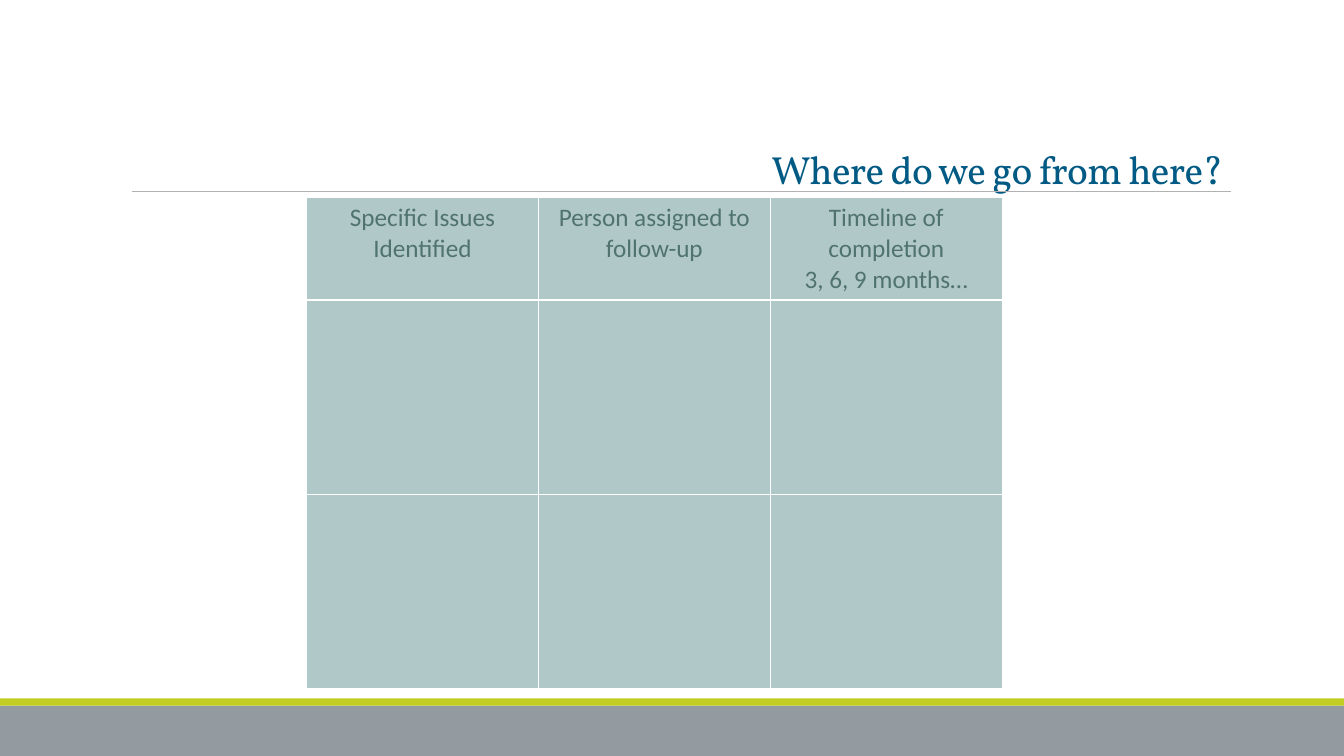
from pptx import Presentation
from pptx.dml.color import RGBColor
from pptx.enum.shapes import MSO_CONNECTOR, MSO_SHAPE
from pptx.enum.text import MSO_ANCHOR, MSO_AUTO_SIZE, PP_ALIGN
from pptx.oxml import parse_xml
from pptx.oxml.ns import nsdecls
from pptx.util import Inches, Pt

COLORS = {
    "footer": "939BA1",
    "accent": "C2CD23",
    "rule": "B2B2B2",
    "title": "005A84",
    "cell": "B0C8C7",
    "cell_text": "507372",
    "border": "FFFFFF",
}
HEADINGS = [
    "Specific Issues Identified",
    "Person assigned to follow-up",
    "Timeline of completion\n3, 6, 9 months…",
]
COLUMN_WIDTH = 2.3
ROW_HEIGHTS = [1.0, 1.93, 1.93]


def rgb(name):
    return RGBColor.from_string(COLORS[name])


def add_band(slide, left, top, width, height, color):
    band = slide.shapes.add_shape(
        MSO_SHAPE.RECTANGLE, Inches(left), Inches(top), Inches(width), Inches(height))
    band.shadow.inherit = False
    band.fill.solid()
    band.fill.fore_color.rgb = rgb(color)
    band.line.fill.background()


def add_footer(slide, left, top, width, height):
    stripe_height = 0.07
    add_band(slide, left, top + stripe_height, width, height - stripe_height, "footer")
    add_band(slide, left, top, width, stripe_height, "accent")


def add_rule(slide, left, top, width):
    rule = slide.shapes.add_connector(
        MSO_CONNECTOR.STRAIGHT, Inches(left), Inches(top), Inches(left + width), Inches(top))
    rule.line.color.rgb = rgb("rule")
    rule.line.width = Pt(0.75)
    rule._element.spPr.append(parse_xml(f"<a:effectLst {nsdecls('a')}/>"))


def place_title(slide, left, top, width, height):
    title = slide.shapes.title
    title.left, title.top = Inches(left), Inches(top)
    title.width, title.height = Inches(width), Inches(height)
    frame = title.text_frame
    frame.text = "Where do we go from here?"
    frame.auto_size = MSO_AUTO_SIZE.NONE
    frame.vertical_anchor = MSO_ANCHOR.BOTTOM
    heading = frame.paragraphs[0]
    heading.alignment = PP_ALIGN.LEFT
    heading.line_spacing = 0.85
    run = heading.runs[0]
    run.font.name = "Vollkorn"
    run.font.size = Pt(28)
    run.font.color.rgb = rgb("title")
    run.font._element.set("spc", "-50")


def style_cell(cell):
    """Draw the white borders, then the fill, which must follow them in the XML."""
    properties = cell._tc.get_or_add_tcPr()
    for side in ("lnL", "lnR", "lnT", "lnB"):
        properties.append(parse_xml(
            f'<a:{side} {nsdecls("a")} w="{Pt(1)}"><a:solidFill>'
            f'<a:srgbClr val="{COLORS["border"]}"/></a:solidFill></a:{side}>'))
    cell.fill.solid()
    cell.fill.fore_color.rgb = rgb("cell")


def add_action_table(slide, left, top):
    width, height = COLUMN_WIDTH * len(HEADINGS), sum(ROW_HEIGHTS)
    actions = slide.shapes.add_table(
        len(ROW_HEIGHTS), len(HEADINGS),
        Inches(left), Inches(top), Inches(width), Inches(height)).table
    actions.first_row = actions.horz_banding = False
    for column in actions.columns:
        column.width = Inches(COLUMN_WIDTH)
    for row, row_height in zip(actions.rows, ROW_HEIGHTS):
        row.height = Inches(row_height)
    for cell in actions.iter_cells():
        style_cell(cell)
    for cell, heading in zip(actions.rows[0].cells, HEADINGS):
        cell.text_frame.text = heading
        for line in cell.text_frame.paragraphs:
            line.alignment = PP_ALIGN.CENTER
            font = line.runs[0].font
            font.name = "Calibri"
            font.size = Pt(18)
            font.bold = False
            font.color.rgb = rgb("cell_text")


def main():
    deck = Presentation()
    deck.slide_width, deck.slide_height = Inches(13.33), Inches(7.5)
    slide = deck.slides.add_slide(deck.slide_layouts[5])
    add_footer(slide, 0, 6.93, 13.33, 0.57)
    add_rule(slide, 1.31, 1.9, 10.9)
    place_title(slide, 7.55, 1.44, 6.71, 0.52)
    add_action_table(slide, 3.04, 1.96)
    deck.save("out.pptx")


if __name__ == "__main__":
    main()
